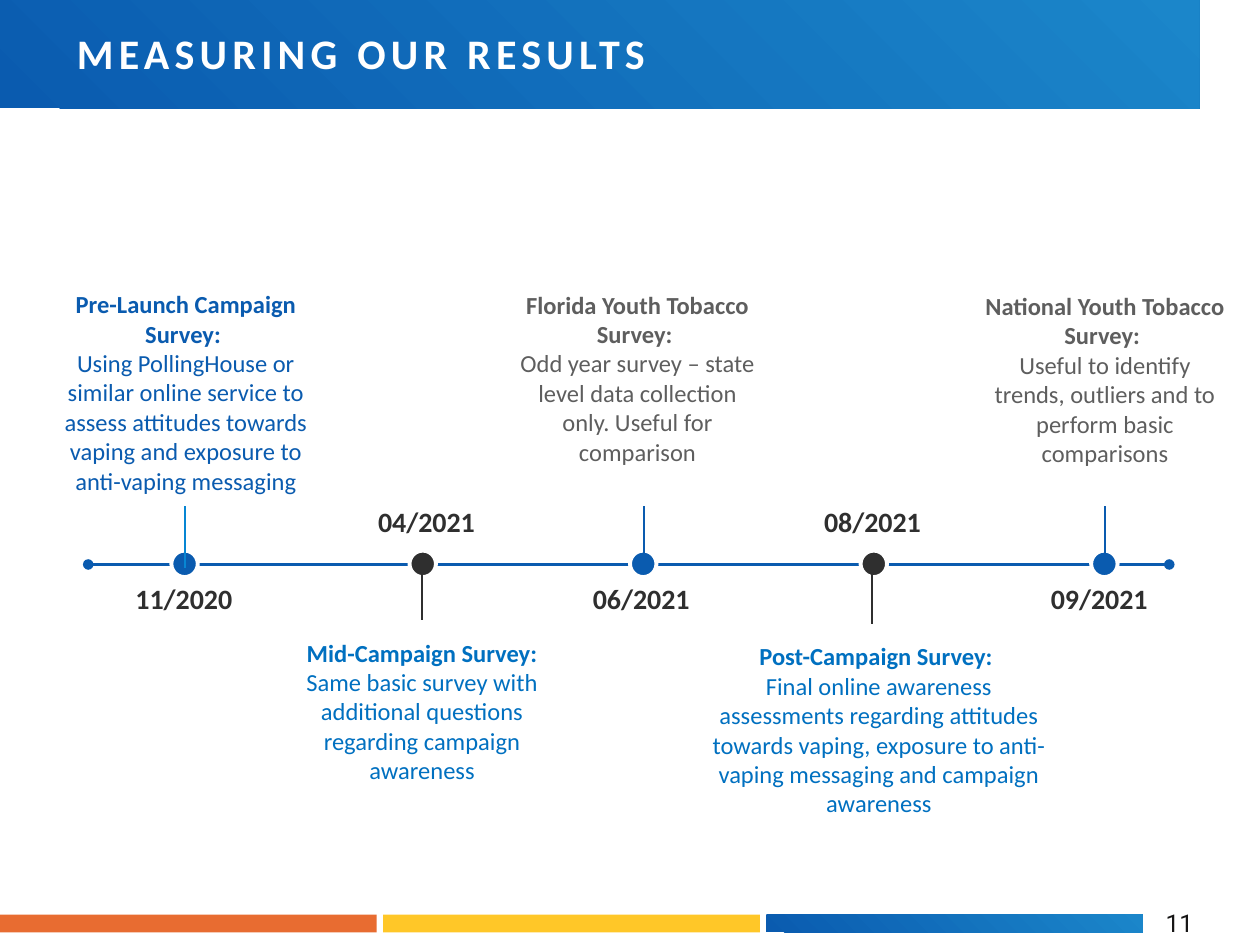
from dataclasses import dataclass

from lxml import etree
from pptx import Presentation
from pptx.dml.color import RGBColor
from pptx.enum.shapes import MSO_CONNECTOR, MSO_SHAPE
from pptx.enum.text import MSO_ANCHOR, MSO_AUTO_SIZE, PP_ALIGN
from pptx.oxml.ns import qn
from pptx.util import Inches, Pt

STRAIGHT = MSO_CONNECTOR.STRAIGHT
RECTANGLE, OVAL = MSO_SHAPE.RECTANGLE, MSO_SHAPE.OVAL
TOP, MIDDLE, BOTTOM = MSO_ANCHOR.TOP, MSO_ANCHOR.MIDDLE, MSO_ANCHOR.BOTTOM

# The slide is a grid of 100 columns by 75 rows, all cells square.
CELL = Inches(10) / 100
AXIS_ROW = 44.8
DOT_SIZE = 2.1
STEM_LENGTH = 4.9
DATE_HEIGHT = 6.4
FOOTER_WIDTH, FOOTER_STEP = 29.9, 30.4

COLORS = {
    "blue": "0A5BAF",
    "light_blue": "1B86CA",
    "stem_blue": "0786D3",
    "text_blue": "0070C0",
    "dark": "2F2F2F",
    "gray": "5E5E5E",
    "orange": "E86C31",
    "yellow": "FFC728",
    "number": "161515",
    "white": "FFFFFF",
}


@dataclass(frozen=True)
class Box:
    left: float
    top: float
    width: float
    height: float

    def lengths(self) -> tuple:
        return tuple(cells(n) for n in (self.left, self.top, self.width, self.height))


@dataclass(frozen=True)
class Milestone:
    date: str
    date_left: float
    date_width: float
    dot_left: float
    stem_column: float
    stem_top: float
    stem_color: str
    above: bool
    heading: str
    detail: str
    detail_color: str
    detail_box: Box


MILESTONES = [
    Milestone("11/2020", 7.8, 13.6, 13.6, 14.7, 40.2, "stem_blue", True,
              "Pre-Launch Campaign Survey: ",
              "Using PollingHouse or similar online service to assess attitudes "
              "towards vaping and exposure to anti-vaping messaging",
              "blue", Box(3, 22.3, 23.5, 17.6)),
    Milestone("04/2021", 28.3, 11.1, 32.5, 33.5, 44.3, "dark", False,
              "Mid-Campaign Survey:",
              "Same basic survey with additional questions regarding campaign awareness",
              "text_blue", Box(23.5, 50, 20, 12.9)),
    Milestone("06/2021", 45.1, 11.6, 50, 51.1, 40.2, "blue", True,
              "Florida Youth Tobacco Survey: ",
              "Odd year survey – state level data collection only. Useful for comparison",
              "gray", Box(40.3, 22.3, 20.6, 15.3)),
    Milestone("08/2021", 63.3, 11.9, 68.3, 69.2, 44.6, "dark", False,
              "Post-Campaign Survey: ",
              "Final online awareness assessments regarding attitudes towards vaping, "
              "exposure to anti-vaping messaging and campaign awareness",
              "text_blue", Box(55.3, 50.3, 28.9, 15.3)),
    Milestone("09/2021", 81.6, 11.3, 86.6, 87.7, 40.2, "blue", True,
              "National Youth Tobacco Survey: ",
              "Useful to identify trends, outliers and to perform basic comparisons",
              "gray", Box(77.4, 22.4, 20.6, 15.3)),
]


def cells(count: float) -> int:
    return round(count * CELL)


def color(name: str) -> RGBColor:
    return RGBColor.from_string(COLORS[name])


def add_shape(slide, kind, box: Box, fill: str | None = None):
    shape = slide.shapes.add_shape(kind, *box.lengths())
    shape.shadow.inherit = False
    shape.line.fill.background()
    if fill:
        shape.fill.solid()
        shape.fill.fore_color.rgb = color(fill)
    else:
        shape.fill.background()
    return shape


def add_gradient_bar(slide, box: Box) -> None:
    fill = add_shape(slide, RECTANGLE, box).fill
    fill.gradient()
    fill.gradient_angle = 45
    for stop, name in zip(fill.gradient_stops, ("blue", "light_blue")):
        stop.color.rgb = color(name)


def add_line(slide, start: tuple, end: tuple, line_color: str, width: float):
    line = slide.shapes.add_connector(STRAIGHT, *map(cells, start + end))
    line.line.color.rgb = color(line_color)
    line.line.width = Pt(width)
    etree.SubElement(line._element.spPr, qn("a:effectLst"))
    return line


def set_frame(shape, margin: float, anchor, wrap: bool = True):
    """Format the text frame and return its first paragraph."""
    frame = shape.text_frame
    frame.margin_left = frame.margin_right = cells(margin)
    frame.margin_top = frame.margin_bottom = cells(margin)
    frame.vertical_anchor = anchor
    frame.word_wrap = wrap
    frame.auto_size = MSO_AUTO_SIZE.NONE
    return frame.paragraphs[0]


def set_font(paragraph, size: float, font_color: str, bold: bool = False,
             name: str = "Calibri") -> None:
    font = paragraph.font
    font.name, font.size, font.bold = name, Pt(size), bold
    font.color.rgb = color(font_color)


def add_axis(slide) -> None:
    axis = add_line(slide, (7, AXIS_ROW), (92.8, AXIS_ROW), "blue", 2)
    outline = axis.line._get_or_add_ln()
    for end in ("a:headEnd", "a:tailEnd"):
        etree.SubElement(outline, qn(end), type="oval")


def add_date(slide, milestone: Milestone) -> None:
    top = 44.6 if milestone.above else 38.5
    label = add_shape(slide, OVAL, Box(milestone.date_left, top,
                                       milestone.date_width, DATE_HEIGHT))
    paragraph = set_frame(label, 0, MIDDLE)
    paragraph.text = milestone.date
    paragraph.alignment = PP_ALIGN.CENTER
    paragraph.line_spacing = Pt(15)
    set_font(paragraph, 16, "dark", bold=True)


def add_marker(slide, milestone: Milestone) -> None:
    dot = add_shape(slide, OVAL, Box(milestone.dot_left, 43.7, DOT_SIZE, DOT_SIZE),
                    "blue" if milestone.above else "dark")
    dot.line.color.rgb = color("white")
    dot.line.width = Pt(2.25)
    column, top = milestone.stem_column, milestone.stem_top
    add_line(slide, (column, top + STEM_LENGTH), (column, top), milestone.stem_color, 1)


def add_detail(slide, milestone: Milestone) -> None:
    box = slide.shapes.add_textbox(*milestone.detail_box.lengths())
    paragraph = set_frame(box, 0.6, BOTTOM if milestone.above else TOP)
    paragraph.alignment = PP_ALIGN.CENTER
    set_font(paragraph, 14, milestone.detail_color)
    heading = paragraph.add_run()
    heading.text = milestone.heading
    heading.font.bold = True
    paragraph.add_line_break()
    paragraph.add_run().text = milestone.detail


def add_footer(slide) -> None:
    bars = [Box(i * FOOTER_STEP, 72.6, FOOTER_WIDTH, 1.4) for i in range(3)]
    add_shape(slide, RECTANGLE, bars[0], "orange")
    add_shape(slide, RECTANGLE, bars[1], "yellow")
    add_gradient_bar(slide, bars[2])
    number = slide.shapes.add_textbox(*Box(91.9, 71.5, 2.8, 3.5).lengths())
    paragraph = set_frame(number, 0.6, MIDDLE, wrap=False)
    paragraph.text = "11"
    set_font(paragraph, 14, "number", name="Roboto")


def add_title(slide) -> None:
    add_gradient_bar(slide, Box(0, 0, 95.2, 8.6))
    title = slide.shapes.title
    title.left, title.top, title.width, title.height = Box(5.4, 1.5, 47.6, 5.4).lengths()
    paragraph = set_frame(title, 0.7, MIDDLE, wrap=False)
    paragraph.text = "MEASURING OUR RESULTS"
    paragraph.alignment = PP_ALIGN.LEFT
    set_font(paragraph, 24, "white", bold=True)
    paragraph.runs[0]._r.get_or_add_rPr().set("spc", "300")
    slide.shapes._spTree.append(title._element)  # in front of the banner


def main() -> None:
    presentation = Presentation()
    presentation.slide_width, presentation.slide_height = cells(100), cells(75)
    slide = presentation.slides.add_slide(presentation.slide_layouts[5])
    add_footer(slide)
    add_axis(slide)
    for draw in (add_date, add_marker, add_detail):
        for milestone in MILESTONES:
            draw(slide, milestone)
    add_title(slide)
    presentation.save("out.pptx")


if __name__ == "__main__":
    main()
